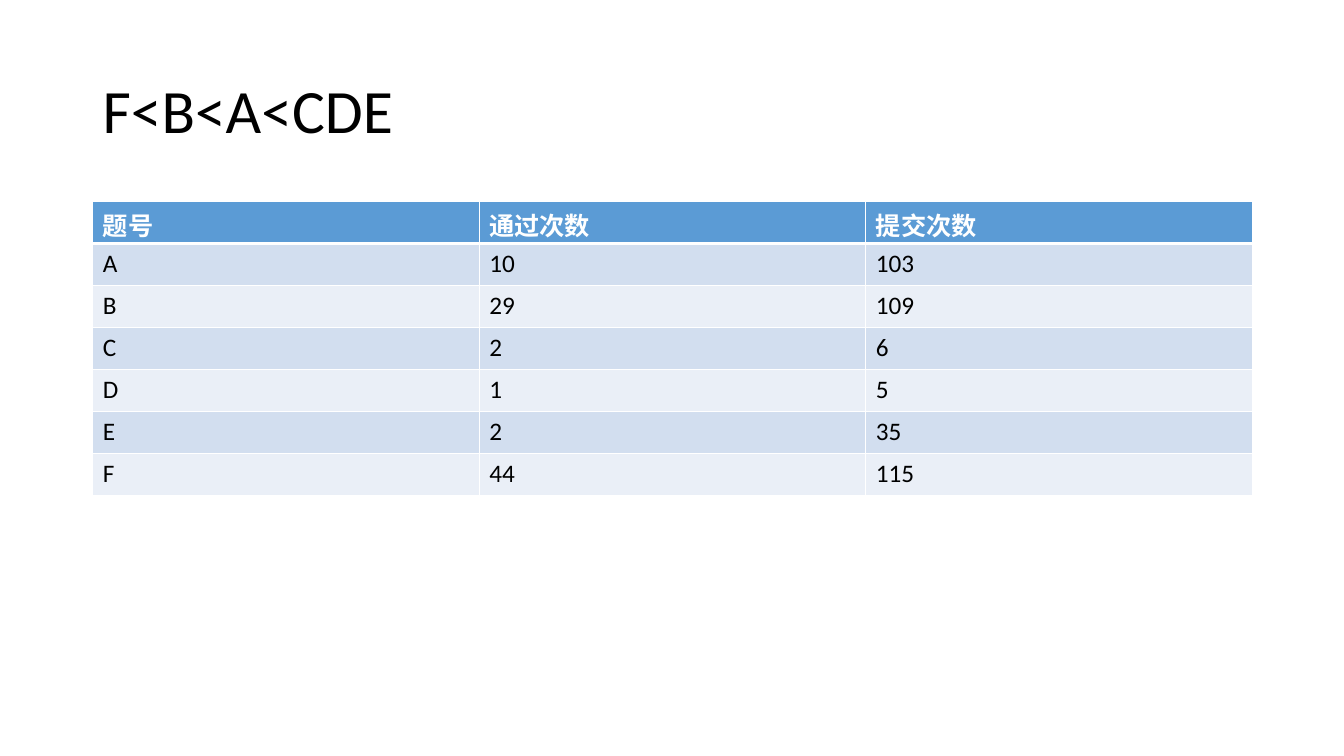
from lxml.etree import SubElement
from pptx import Presentation
from pptx.dml.color import RGBColor as RGB
from pptx.enum.text import MSO_ANCHOR as Anchor
from pptx.oxml.ns import qn
from pptx.util import Inches, Pt

COLORS = {
    "text": "000000",
    "white": "FFFFFF",
    "header": "5B9BD5",
    "odd": "D2DEEF",
    "even": "EAEFF7",
}
LEFT, WIDTH = 0.92, 11.5
ROW_HEIGHT = 0.417

RESULTS = [
    ("题号", "通过次数", "提交次数"),
    ("A", "10", "103"),
    ("B", "29", "109"),
    ("C", "2", "6"),
    ("D", "1", "5"),
    ("E", "2", "35"),
    ("F", "44", "115"),
]


class SlideBuilder:
    font = "Calibri"

    def __init__(self, prs):
        self.slide = prs.slides.add_slide(prs.slide_layouts[6])

    def format_text(self, tf, size, color, bold=False):
        for p in tf.paragraphs:
            for r in p.runs:
                r.font.name = self.font
                r.font.size = Pt(size)
                r.font.bold = bold
                r.font.color.rgb = RGB.from_string(COLORS[color])

    def title(self, text, left, top, width, height):
        sp = self.slide.shapes.add_textbox(
            Inches(left), Inches(top), Inches(width), Inches(height))
        tf = sp.text_frame
        tf.word_wrap = True
        tf.vertical_anchor = Anchor.MIDDLE
        tf.text = text
        tf.paragraphs[0].line_spacing = 0.9
        self.format_text(tf, 44, "text")

    def borders(self, cell, top, bottom):
        tc_pr = cell._tc.get_or_add_tcPr()
        for side, width in (("L", 1), ("R", 1), ("T", top), ("B", bottom)):
            ln = SubElement(tc_pr, qn(f"a:ln{side}"), w=str(Pt(width)))
            fill = SubElement(ln, qn("a:solidFill"))
            SubElement(fill, qn("a:srgbClr"), val=COLORS["white"])

    def table(self, rows, left, top, width, row_height):
        table = self.slide.shapes.add_table(
            len(rows), len(rows[0]), Inches(left), Inches(top),
            Inches(width), Inches(row_height * len(rows))).table
        for i, values in enumerate(rows):
            header = i == 0
            fill = "header" if header else "odd" if i % 2 else "even"
            for j, value in enumerate(values):
                cell = table.cell(i, j)
                cell.text = value
                self.format_text(cell.text_frame, 18,
                                 "white" if header else "text", header)
                self.borders(cell, 3 if i == 1 else 1, 3 if header else 1)
                cell.fill.solid()
                cell.fill.fore_color.rgb = RGB.from_string(COLORS[fill])


def main():
    prs = Presentation()
    prs.slide_width, prs.slide_height = Inches(13.33), Inches(7.5)
    builder = SlideBuilder(prs)
    builder.title("F<B<A<CDE", LEFT, 0.4, WIDTH, 1.45)
    builder.table(RESULTS, LEFT, 2, WIDTH, ROW_HEIGHT)
    prs.save("out.pptx")


if __name__ == "__main__":
    main()
